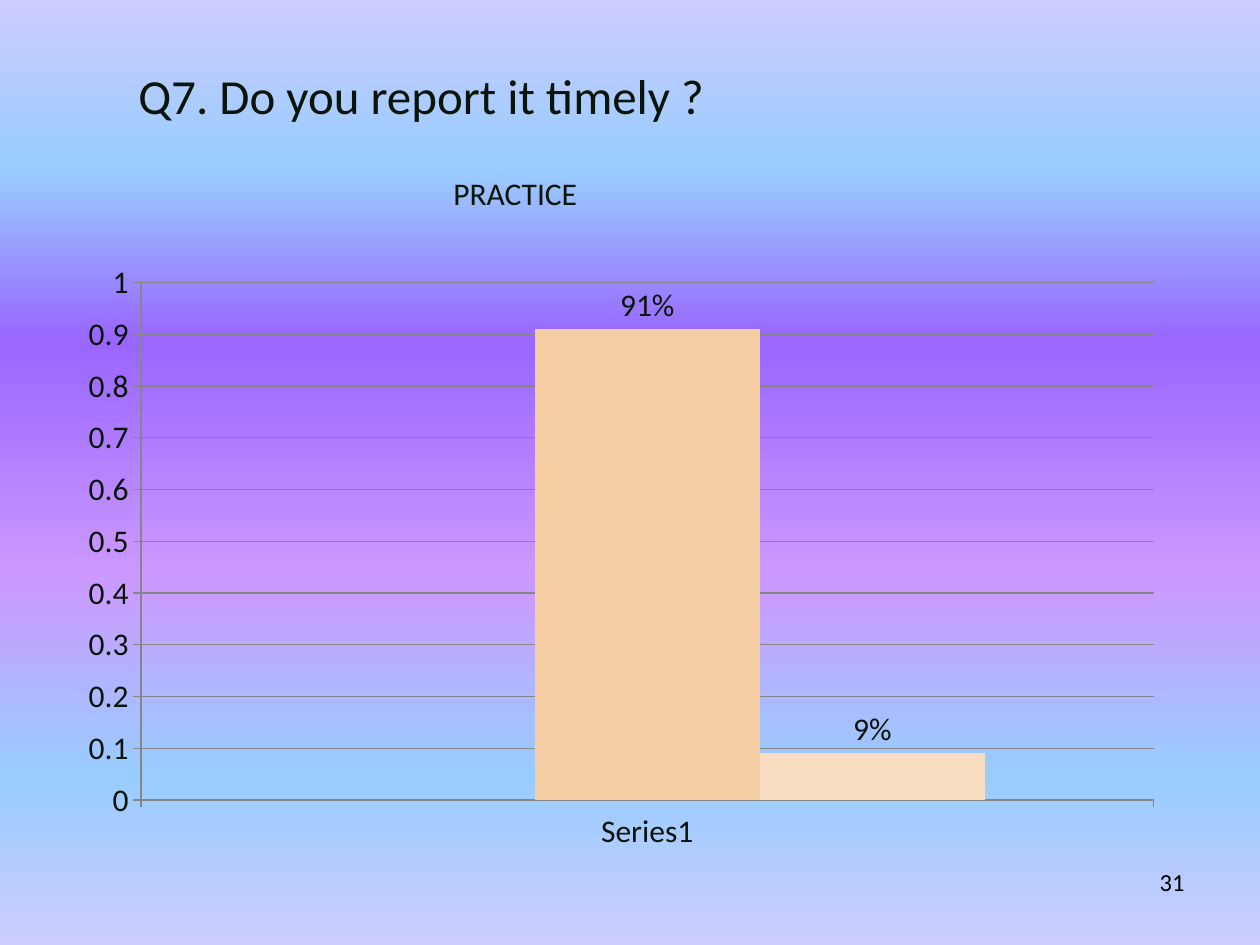
from lxml import etree
from pptx import Presentation
from pptx.chart.data import CategoryChartData
from pptx.dml.color import RGBColor
from pptx.enum.chart import XL_CHART_TYPE, XL_LABEL_POSITION, XL_TICK_MARK
from pptx.enum.text import MSO_ANCHOR, PP_ALIGN
from pptx.oxml.ns import qn
from pptx.util import Pt

COLUMN = XL_CHART_TYPE.COLUMN_CLUSTERED
ABOVE = XL_LABEL_POSITION.OUTSIDE_END
OUT = XL_TICK_MARK.OUTSIDE
TOP, MIDDLE = MSO_ANCHOR.TOP, MSO_ANCHOR.MIDDLE
LEFT, RIGHT = PP_ALIGN.LEFT, PP_ALIGN.RIGHT

FONT = "Calibri"
INK = RGBColor(0x09, 0x14, 0x0A)
BLACK = RGBColor(0, 0, 0)
GREY = RGBColor(0x86, 0x86, 0x86)
PEACH = RGBColor(0xF5, 0xCF, 0xA3)
CREAM = RGBColor(0xF8, 0xDD, 0xC1)
LILAC = RGBColor(0xCC, 0xCC, 0xFF)
SKY = RGBColor(0x99, 0xCC, 0xFF)
VIOLET = RGBColor(0x99, 0x66, 0xFF)
MAUVE = RGBColor(0xCC, 0x99, 0xFF)

deck = Presentation()
deck.slide_width, deck.slide_height = Pt(720), Pt(540)
slide = deck.slides.add_slide(deck.slide_layouts[6])

# Background gradient, top to bottom
fill = slide.background.fill
fill.gradient()
fill.gradient_angle = 270
stops = slide.element.find(".//" + qn("a:gsLst"))
for stop in list(stops):
    stops.remove(stop)
for place, color in ((0, LILAC), (18, SKY), (36, VIOLET),
                     (61, MAUVE), (82, SKY), (100, LILAC)):
    stop = etree.SubElement(stops, qn("a:gs"), pos=str(place * 1000))
    etree.SubElement(stop, qn("a:srgbClr"), val=str(color))

# Chart data
data = CategoryChartData(number_format="General")
data.categories = ["Series1"]
for name, value in (("Series 1", None), ("Series 2", 0.91), ("Series 3", 0.09)):
    data.add_series(name, [value])
chart = slide.shapes.add_chart(
    COLUMN, Pt(36), Pt(144), Pt(636), Pt(348), data).chart
chart.has_legend = False
chart.has_title = False
chart.font.name, chart.font.size = FONT, Pt(18)
chart.font.color.rgb = INK

# Columns and their labels
plot = chart.plots[0]
plot.gap_width, plot.overlap = 150, 0
plot.vary_by_categories = False
for row, color in zip(plot.series, (PEACH, PEACH, CREAM)):
    row.format.fill.solid()
    row.format.fill.fore_color.rgb = color
    tags = row.data_labels
    tags.show_value = True
    tags.number_format, tags.number_format_is_linked = "0%", False
    tags.position = ABOVE

# Axes and gridlines
scale = chart.value_axis
scale.minimum_scale, scale.maximum_scale, scale.major_unit = 0, 1, 0.1
scale.has_major_gridlines = True
for axis in (scale, chart.category_axis):
    axis.major_tick_mark = OUT
for part in (scale, chart.category_axis, scale.major_gridlines):
    part.format.line.color.rgb = GREY
    part.format.line.width = Pt(0.75)

# Place of the plot inside the chart
area = plot._element.getparent()
frame = area.find(qn("c:layout"))
if frame is None:
    frame = etree.Element(qn("c:layout"))
    area.insert(0, frame)
box = etree.SubElement(frame, qn("c:manualLayout"))
for tag, value in (("layoutTarget", "inner"), ("xMode", "edge"),
                   ("yMode", "edge"), ("x", 0.07), ("y", 0.05),
                   ("w", 0.91), ("h", 0.85)):
    etree.SubElement(box, qn("c:" + tag), val=str(value))

# Title, chart heading and page number
for text, x, y, w, h, size, color, anchor, align in (
        ("Q7. Do you report it timely ?", 72, 18, 498, 72, 28, INK, MIDDLE, LEFT),
        ("PRACTICE", 252, 96, 120, 29, 18, INK, TOP, LEFT),
        ("31", 516, 492, 168, 37.5, 14, BLACK, TOP, RIGHT)):
    frame = slide.shapes.add_textbox(Pt(x), Pt(y), Pt(w), Pt(h)).text_frame
    frame.word_wrap = True
    frame.vertical_anchor = anchor
    frame.text = text
    line = frame.paragraphs[0]
    line.alignment = align
    line.font.name, line.font.size = FONT, Pt(size)
    line.font.color.rgb = color

deck.save("out.pptx")
